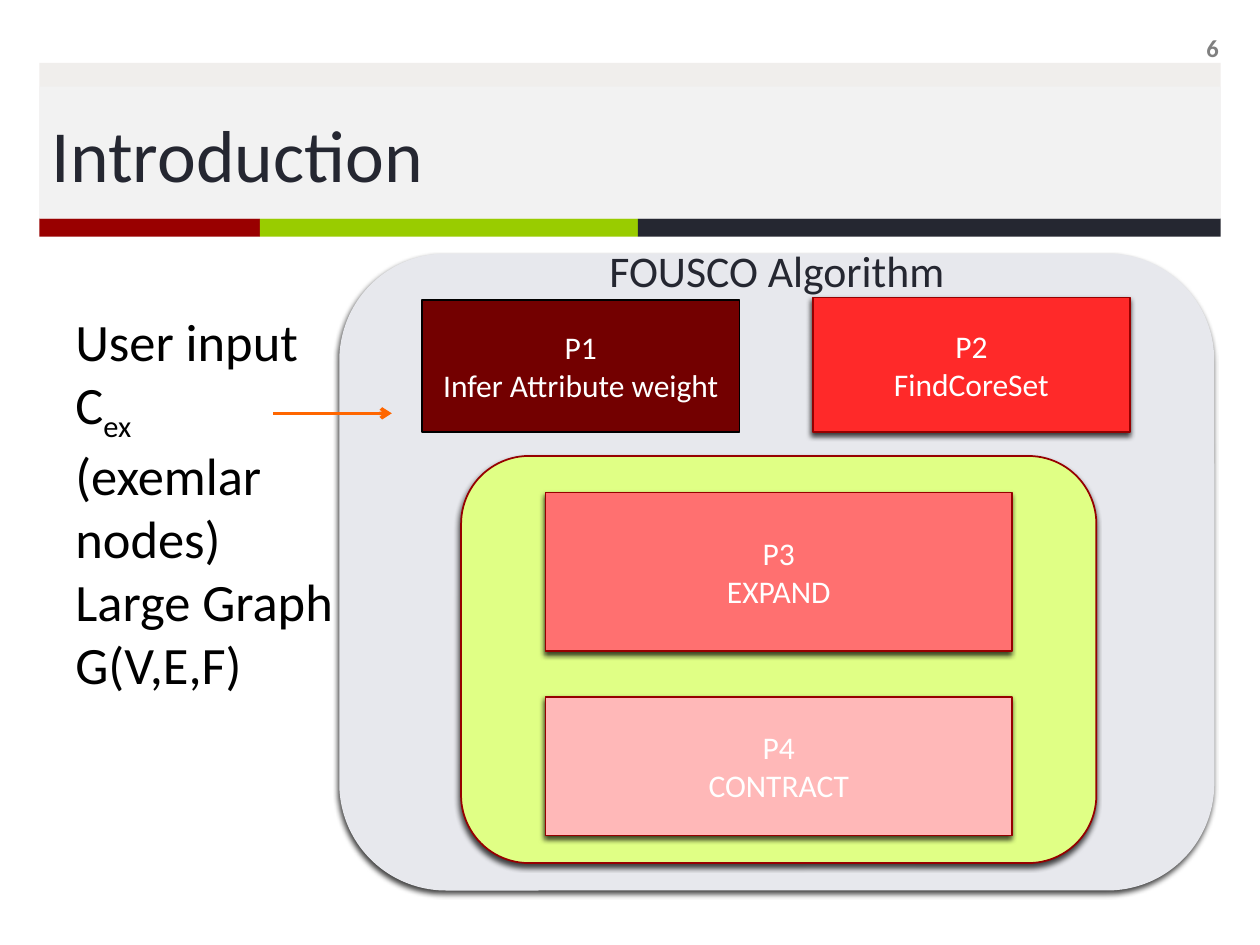
import pptx
import pptx.util
import pptx.dml.color
import pptx.enum.shapes
import pptx.enum.text
import pptx.oxml
import pptx.oxml.ns
from lxml import etree

Pt = pptx.util.Pt
SHAPE = pptx.enum.shapes.MSO_SHAPE
ALIGN = pptx.enum.text.PP_ALIGN
ANCHOR = pptx.enum.text.MSO_ANCHOR
FONT = "Calibri"
COLORS = {
    "band": "F0EEEC", "title": "F2F2F2", "navy": "252731", "red": "990000",
    "green": "99CC00", "gray": "808080", "black": "000000", "white": "FFFFFF",
    "panel": "E7E8ED", "loop": "E0FF85", "border": "960000", "arrow": "FF6600",
    "p1": "730000", "p2": "FF2929", "p3": "FF7070", "p4": "FFB8B8",
}
TITLE = "Introduction"
INPUTS = ["User input", [("C", 0), ("ex", -25)], "(exemlar", "nodes)", "Large Graph", "G(V,E,F)"]
BAR_LEFT = 22.5
BARS = [("red", 126), ("green", 216), ("navy", 333)]
PANELS = [
    ("panel", "panel", (194.4, 145.4, 499, 363)),
    ("loop", "border", (263.5, 260.6, 363, 232.6)),
]
STEPS = [
    (["P1", "Infer Attribute weight"], "p1", "black", (241.2, 171.4, 181.4, 75.6), False),
    (["P2", "FindCoreSet"], "p2", "border", (464.4, 170, 181.4, 77), True),
    (["P3", "EXPAND"], "p3", "border", (311.8, 281.5, 266.4, 90.7), True),
    (["P4", "CONTRACT"], "p4", "border", (311.8, 398.2, 266.4, 79.2), True),
]
SHADOW = (
    '<a:effectLst %s><a:outerShdw blurRad="38100" dist="25400" dir="6600000" rotWithShape="0">'
    '<a:srgbClr val="000000"><a:alpha val="75000"/></a:srgbClr></a:outerShdw></a:effectLst>'
    % pptx.oxml.ns.nsdecls("a")
)


def color(name):
    return pptx.dml.color.RGBColor.from_string(COLORS[name])


def write(shape, lines, size=18, fill="white", align=ALIGN.CENTER, anchor=ANCHOR.MIDDLE,
          bold=False, wrap=True):
    frame = shape.text_frame
    frame.word_wrap = wrap
    frame.vertical_anchor = anchor
    for index, line in enumerate(lines):
        paragraph = frame.add_paragraph() if index else frame.paragraphs[0]
        paragraph.alignment = align
        for text, baseline in [(line, 0)] if isinstance(line, str) else line:
            run = paragraph.add_run()
            run.text = text
            run.font.name = FONT
            run.font.size = Pt(size)
            run.font.bold = bold
            run.font.color.rgb = color(fill)
            if baseline:
                run.font._element.set("baseline", str(baseline * 1000))


def add_box(slide, kind, box, fill, line=None, shadow=False):
    shape = slide.shapes.add_shape(kind, *map(Pt, box))
    shape.fill.solid()
    shape.fill.fore_color.rgb = color(fill)
    if line:
        shape.line.color.rgb = color(line)
        shape.line.width = Pt(1)
    else:
        shape.line.fill.background()
    if shadow:
        shape.element.spPr.append(pptx.oxml.parse_xml(SHADOW))
    else:
        shape.shadow.inherit = False
    return shape


def add_text(slide, box, lines, **style):
    write(slide.shapes.add_textbox(*map(Pt, box)), lines, **style)


def add_arrow(slide, start, end):
    connector = slide.shapes.add_connector(
        pptx.enum.shapes.MSO_CONNECTOR.STRAIGHT, *map(Pt, start + end))
    connector.line.color.rgb = color("arrow")
    connector.line.width = Pt(2)
    etree.SubElement(connector.line._get_or_add_ln(), pptx.oxml.ns.qn("a:tailEnd"), type="arrow")
    etree.SubElement(connector.element.spPr, pptx.oxml.ns.qn("a:effectLst"))


def main():
    presentation = pptx.Presentation()
    presentation.slide_width, presentation.slide_height = Pt(720), Pt(540)
    slide = presentation.slides.add_slide(presentation.slide_layouts[5])

    bar_width = sum(width for name, width in BARS)
    add_box(slide, SHAPE.RECTANGLE, (BAR_LEFT, 36, bar_width, 89), "band")
    left = BAR_LEFT
    for name, width in BARS:
        add_box(slide, SHAPE.RECTANGLE, (left, 124.8, width, 10.5), name)
        left += width

    title = slide.shapes.title
    title.left, title.top, title.width, title.height = map(Pt, (BAR_LEFT, 49.5, bar_width, 76))
    title.height = Pt(75.5)
    title.fill.solid()
    title.fill.fore_color.rgb = color("title")
    write(title, [TITLE], size=42, fill="navy", align=ALIGN.LEFT)
    slide.shapes.element.append(title.element)

    add_text(slide, (653.8, 13, 49.7, 28), ["6"], size=14, fill="gray", align=ALIGN.RIGHT, bold=True)
    add_text(slide, (36, 172.8, 163.4, 225.4), INPUTS, size=30, fill="black",
             align=ALIGN.LEFT, anchor=ANCHOR.TOP, wrap=False)

    for fill, line, box in PANELS:
        add_box(slide, SHAPE.ROUNDED_RECTANGLE, box, fill, line, True)
    panel_left, panel_top, panel_width, panel_height = PANELS[0][2]
    add_text(slide, (panel_left, panel_top - 9.5, panel_width, 38), ["FOUSCO Algorithm"],
             size=25, fill="navy", anchor=ANCHOR.TOP)
    for lines, fill, line, box, shadow in STEPS:
        write(add_box(slide, SHAPE.RECTANGLE, box, fill, line, shadow), lines)
    add_arrow(slide, (156.2, 236.2), (223.9, 236.2))
    presentation.save("out.pptx")


if __name__ == "__main__":
    main()
